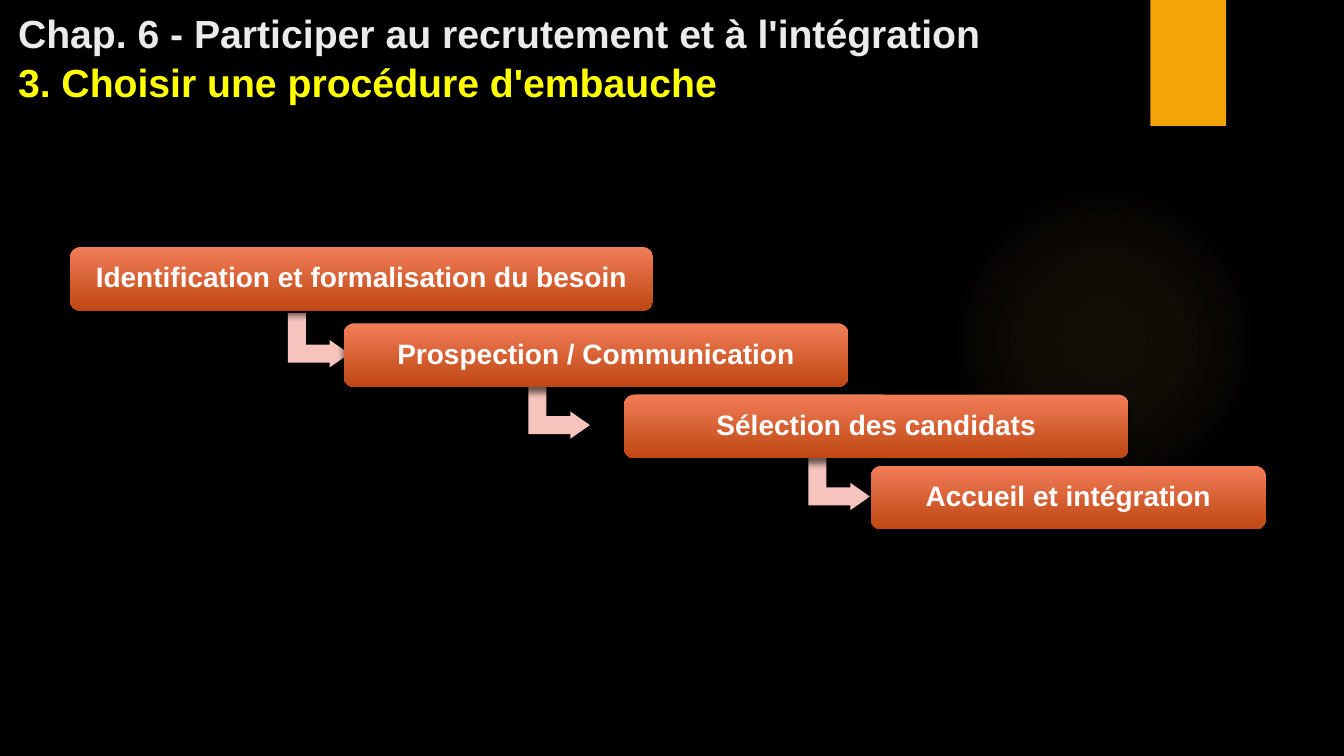
from typing import NamedTuple

from lxml import etree
from pptx import Presentation
from pptx.dml.color import RGBColor as Rgb
from pptx.enum.shapes import MSO_SHAPE as Kind
from pptx.enum.text import MSO_ANCHOR as Anchor, PP_ALIGN as Align
from pptx.oxml import parse_xml
from pptx.oxml.ns import nsdecls, qn
from pptx.util import Pt

HUE = {
    "back": "000000", "glow": "FAC96A", "tab": "F5A408", "arrow": "F7C4BD",
    "top": "F17D58", "base": "BF4713", "head": "EBEBEB", "sub": "FFFF00",
    "text": "FFFFFF", "shade": "000000",
}
FONT = "Arial"
STEP_H = 45.5
TURN_W, TURN_H = 38.9, 43.9


class Step(NamedTuple):
    text: str
    left: float
    top: float
    width: float


class Turn(NamedTuple):
    left: float
    top: float


STEPS = [
    Step("Identification et formalisation du besoin", 50, 176.4, 416.5),
    Step("Prospection / Communication", 245.5, 230.9, 360.5),
    Step("Sélection des candidats", 445.7, 281.8, 360.5),
    Step("Accueil et intégration", 622.1, 332.7, 282),
]
TURNS = [Turn(208.1, 221), Turn(380, 272), Turn(580, 323)]


def rgb(name: str) -> Rgb:
    return Rgb.from_string(HUE[name])


def add_form(slide, kind, left: float, top: float, width: float, height: float):
    form = slide.shapes.add_shape(kind, Pt(left), Pt(top), Pt(width), Pt(height))
    form.line.fill.background()
    form.shadow.inherit = False
    return form


def paint(form, name: str) -> None:
    form.fill.solid()
    form.fill.fore_color.rgb = rgb(name)


def cast(form, blur: float, dist: float, alpha: int) -> None:
    """Add a soft shadow below the shape."""
    effects = form._element.spPr.find(qn("a:effectLst"))
    shade = etree.SubElement(effects, qn("a:outerShdw"), blurRad=str(Pt(blur)),
                             dist=str(Pt(dist)), dir="5400000", rotWithShape="0")
    color = etree.SubElement(shade, qn("a:srgbClr"), val=HUE["shade"])
    etree.SubElement(color, qn("a:alpha"), val=str(alpha * 1000))


def style(run, size: float, name: str) -> None:
    font = run.font
    font.name, font.size, font.bold = FONT, Pt(size), True
    font.color.rgb = rgb(name)


def add_glow(slide) -> None:
    glow = add_form(slide, Kind.OVAL, 677.5, 131.8, 221.8, 221.8)
    glow.fill.background()
    stops = "".join(
        f'<a:gs pos="{pos * 1000}"><a:srgbClr val="{HUE["glow"]}">'
        f'<a:alpha val="{alpha * 1000}"/></a:srgbClr></a:gs>'
        for pos, alpha in [(0, 7), (36, 6), (69, 0)])
    fade = parse_xml(
        f'<a:gradFill {nsdecls("a")}><a:gsLst>{stops}</a:gsLst><a:path path="circle">'
        '<a:fillToRect l="50000" t="50000" r="50000" b="50000"/></a:path></a:gradFill>')
    props = glow._element.spPr
    props.replace(props.find(qn("a:noFill")), fade)


def add_title(slide) -> None:
    box = slide.shapes.add_textbox(Pt(5.8), Pt(0), Pt(808.5), Pt(78.5))
    frame = box.text_frame
    frame.word_wrap = True
    frame.vertical_anchor = Anchor.BOTTOM
    para = frame.paragraphs[0]
    para.text = ("Chap. 6 - Participer au recrutement et à l'intégration\n"
                 "3. Choisir une procédure d'embauche")
    para.line_spacing = 1.04
    for run, name in zip(para.runs, ["head", "sub"]):
        style(run, 28, name)


def add_turn(slide, turn: Turn) -> None:
    arrow = add_form(slide, Kind.BENT_UP_ARROW, turn.left, turn.top, TURN_W, TURN_H)
    arrow.rotation = 90
    for i, value in enumerate([0.33, 0.25, 0.36]):
        arrow.adjustments[i] = value
    paint(arrow, "arrow")
    cast(arrow, 5, 3, 60)


def add_step(slide, step: Step) -> None:
    box = add_form(slide, Kind.ROUNDED_RECTANGLE, step.left, step.top, step.width, STEP_H)
    box.fill.gradient()
    box.fill.gradient_angle = 270
    for stop, pos, name in zip(box.fill.gradient_stops, [0, 1], ["top", "base"]):
        stop.position = pos
        stop.color.rgb = rgb(name)
    cast(box, 5, 3, 60)
    frame = box.text_frame
    frame.text = step.text
    frame.word_wrap = True
    frame.vertical_anchor = Anchor.MIDDLE
    para = frame.paragraphs[0]
    para.alignment = Align.CENTER
    para.line_spacing = 0.9
    style(para.runs[0], 20, "text")


def main() -> None:
    deck = Presentation()
    deck.slide_width, deck.slide_height = Pt(960), Pt(540)
    slide = deck.slides.add_slide(deck.slide_layouts[6])

    # Backdrop
    slide.background.fill.solid()
    slide.background.fill.fore_color.rgb = rgb("back")
    add_glow(slide)
    tab = add_form(slide, Kind.RECTANGLE, 821.8, 0, 54, 90)
    paint(tab, "tab")
    cast(tab, 3, 2, 45)

    # Title
    add_title(slide)

    # Staircase of steps, arrows behind the boxes
    for turn in TURNS:
        add_turn(slide, turn)
    for step in STEPS:
        add_step(slide, step)

    deck.save("out.pptx")


if __name__ == "__main__":
    main()
